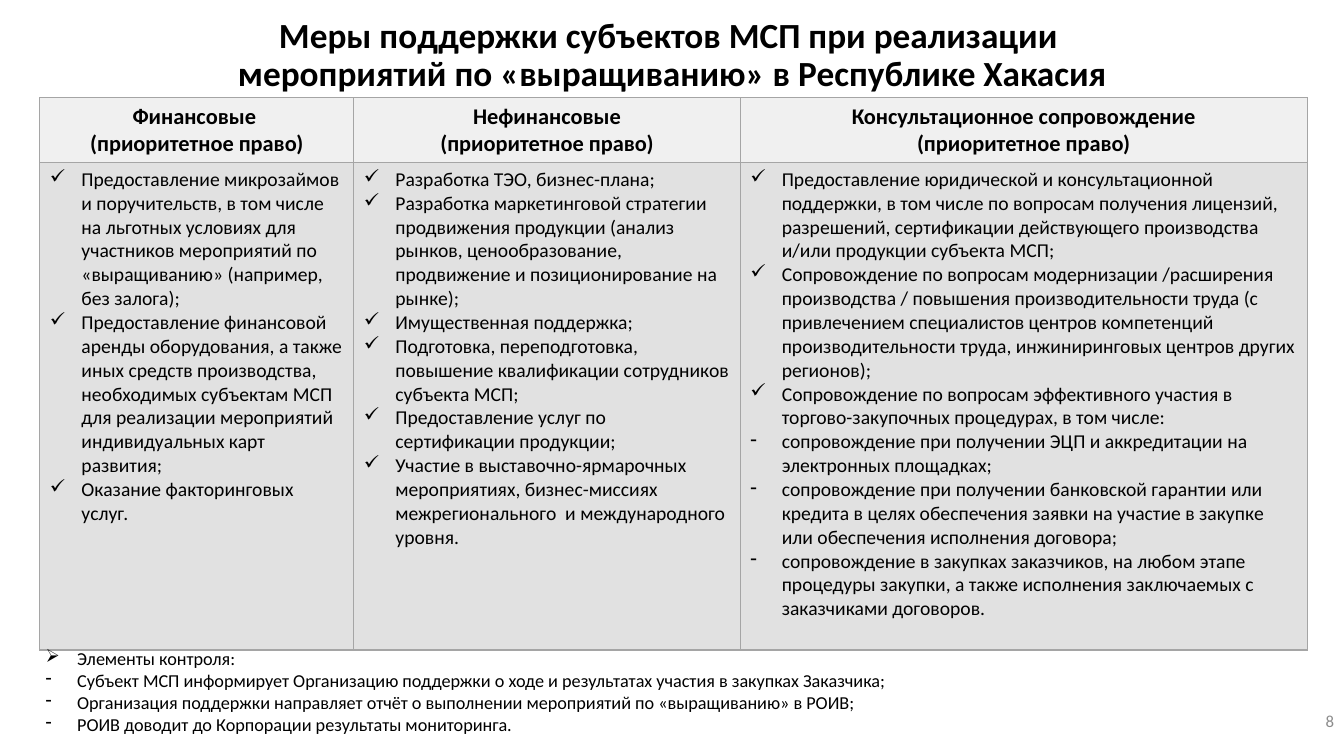
import pptx
import pptx.dml.color
import pptx.enum.text
import pptx.oxml
import pptx.oxml.ns
import pptx.util
from lxml import etree

RGBColor = pptx.dml.color.RGBColor
ALIGN = pptx.enum.text.PP_ALIGN
ANCHOR = pptx.enum.text.MSO_ANCHOR

BLACK = RGBColor(0x00, 0x00, 0x00)
NUMBER_GRAY = RGBColor(0x8C, 0x8C, 0x8C)
HEADER_FILL = RGBColor(0xF0, 0xF0, 0xF0)
BODY_FILL = RGBColor(0xE1, 0xE1, 0xE1)
BORDER = RGBColor(0xA5, 0xA5, 0xA5)

FONT = "Calibri"
EMU_PER_PX = 9525
INDENT = 30
CHECK, DASH, ARROW = "✓", "-", "➢"

TITLE = ["Меры поддержки субъектов МСП при реализации ",
         "мероприятий по «выращиванию» в Республике Хакасия"]
PRIORITY = "(приоритетное право)"

# Column width, heading, bulleted measures
COLUMNS = [
    (299, "Финансовые ", [
        (CHECK, "Предоставление микрозаймов и поручительств, в том числе на льготных условиях для "
                "участников мероприятий по «выращиванию» (например, без залога);"),
        (CHECK, "Предоставление финансовой аренды оборудования, а также иных средств производства, "
                "необходимых субъектам МСП для реализации мероприятий индивидуальных карт развития;"),
        (CHECK, "Оказание факторинговых услуг."),
    ]),
    (368, "Нефинансовые", [
        (CHECK, "Разработка ТЭО, бизнес-плана;"),
        (CHECK, "Разработка маркетинговой стратегии продвижения продукции (анализ рынков, "
                "ценообразование, продвижение и позиционирование на рынке);"),
        (CHECK, "Имущественная поддержка;"),
        (CHECK, "Подготовка, переподготовка, повышение квалификации сотрудников субъекта МСП;"),
        (CHECK, "Предоставление услуг по сертификации продукции;"),
        (CHECK, "Участие в выставочно-ярмарочных мероприятиях, бизнес-миссиях "
                "межрегионального  и международного уровня."),
    ]),
    (540, "Консультационное сопровождение", [
        (CHECK, "Предоставление юридической и консультационной поддержки, в том числе по вопросам "
                "получения лицензий, разрешений, сертификации действующего производства и/или "
                "продукции субъекта МСП;"),
        (CHECK, "Сопровождение по вопросам модернизации /расширения производства / повышения "
                "производительности труда (с привлечением специалистов центров компетенций "
                "производительности труда, инжиниринговых центров других регионов);"),
        (CHECK, "Сопровождение по вопросам эффективного участия в торгово-закупочных процедурах, "
                "в том числе:"),
        (DASH, "сопровождение при получении ЭЦП и аккредитации на электронных площадках;"),
        (DASH, "сопровождение при получении банковской гарантии или кредита в целях обеспечения "
               "заявки на участие в закупке или обеспечения исполнения договора;"),
        (DASH, "сопровождение в закупках заказчиков, на любом этапе процедуры закупки, а также "
               "исполнения заключаемых с заказчиками договоров."),
    ]),
]
ROW_HEIGHTS = [62, 464]

CONTROLS = [
    (ARROW, "Элементы контроля:"),
    (DASH, "Субъект МСП информирует Организацию поддержки о ходе и результатах участия "
           "в закупках Заказчика;"),
    (DASH, "Организация поддержки направляет отчёт о выполнении мероприятий по «выращиванию» в РОИВ;"),
    (DASH, "РОИВ доводит до Корпорации результаты мониторинга."),
]


def px(n):
    return pptx.util.Emu(n * EMU_PER_PX)


def add_run(p, text, size, color=BLACK, bold=False):
    r = p.add_run()
    r.text = text
    r.font.name = FONT
    r.font.size = pptx.util.Pt(size)
    r.font.bold = bold
    r.font.color.rgb = color


def add_paragraph(tf, first):
    return tf.paragraphs[0] if first else tf.add_paragraph()


def fill_bullets(tf, items, size):
    for i, (bullet, text) in enumerate(items):
        p = add_paragraph(tf, i == 0)
        pPr = p._p.get_or_add_pPr()
        pPr.set("marL", str(px(INDENT)))
        pPr.set("indent", str(px(-INDENT)))
        etree.SubElement(pPr, pptx.oxml.ns.qn("a:buChar")).set("char", bullet)
        add_run(p, text, size)


def set_borders(cell):
    tcPr = cell._tc.get_or_add_tcPr()
    for i, side in enumerate(("lnL", "lnR", "lnT", "lnB")):
        tcPr.insert(i, pptx.oxml.parse_xml(
            f'<a:{side} {pptx.oxml.ns.nsdecls("a")} w="12700"><a:solidFill>'
            f'<a:srgbClr val="{BORDER}"/></a:solidFill></a:{side}>'))


def style_cell(cell, color):
    cell.fill.solid()
    cell.fill.fore_color.rgb = color
    set_borders(cell)


def add_text_box(s, box, anchor=ANCHOR.TOP):
    tf = s.shapes.add_textbox(*map(px, box)).text_frame
    tf.word_wrap = True
    tf.vertical_anchor = anchor
    return tf


def add_title(s, box):
    p = add_text_box(s, box, ANCHOR.MIDDLE).paragraphs[0]
    p.alignment = ALIGN.CENTER
    p.line_spacing = 0.9
    for i, line in enumerate(TITLE):
        if i:
            p.add_line_break()
        add_run(p, line, 25.2, bold=True)


def add_measures_table(s, left, top):
    width = sum(column[0] for column in COLUMNS)
    frame = s.shapes.add_table(len(ROW_HEIGHTS), len(COLUMNS), px(left), px(top),
                               px(width), px(sum(ROW_HEIGHTS)))
    table = frame.table
    table.first_row = table.horz_banding = False
    for row, height in zip(table.rows, ROW_HEIGHTS):
        row.height = px(height)
    for i, (width, heading, measures) in enumerate(COLUMNS):
        table.columns[i].width = px(width)
        header, body = table.cell(0, i), table.cell(1, i)
        header.vertical_anchor = ANCHOR.MIDDLE
        for j, line in enumerate((heading, PRIORITY)):
            p = add_paragraph(header.text_frame, j == 0)
            p.alignment = ALIGN.CENTER
            add_run(p, line, 16, bold=True)
        fill_bullets(body.text_frame, measures, 14)
        style_cell(header, HEADER_FILL)
        style_cell(body, BODY_FILL)


def add_controls(s, box):
    fill_bullets(add_text_box(s, box), CONTROLS, 13)


def add_slide_number(s, box):
    p = add_text_box(s, box, ANCHOR.MIDDLE).paragraphs[0]
    p.alignment = ALIGN.RIGHT
    add_run(p, "8", 12, NUMBER_GRAY)


def main():
    prs = pptx.Presentation()
    prs.slide_width, prs.slide_height = px(1280), px(720)
    s = prs.slides.add_slide(prs.slide_layouts[6])
    add_title(s, (34, 12, 1213, 82))
    add_measures_table(s, 38, 93)
    add_controls(s, (34, 612, 1207, 94))
    add_slide_number(s, (1246, 667, 34, 38))
    prs.save("out.pptx")


if __name__ == "__main__":
    main()
